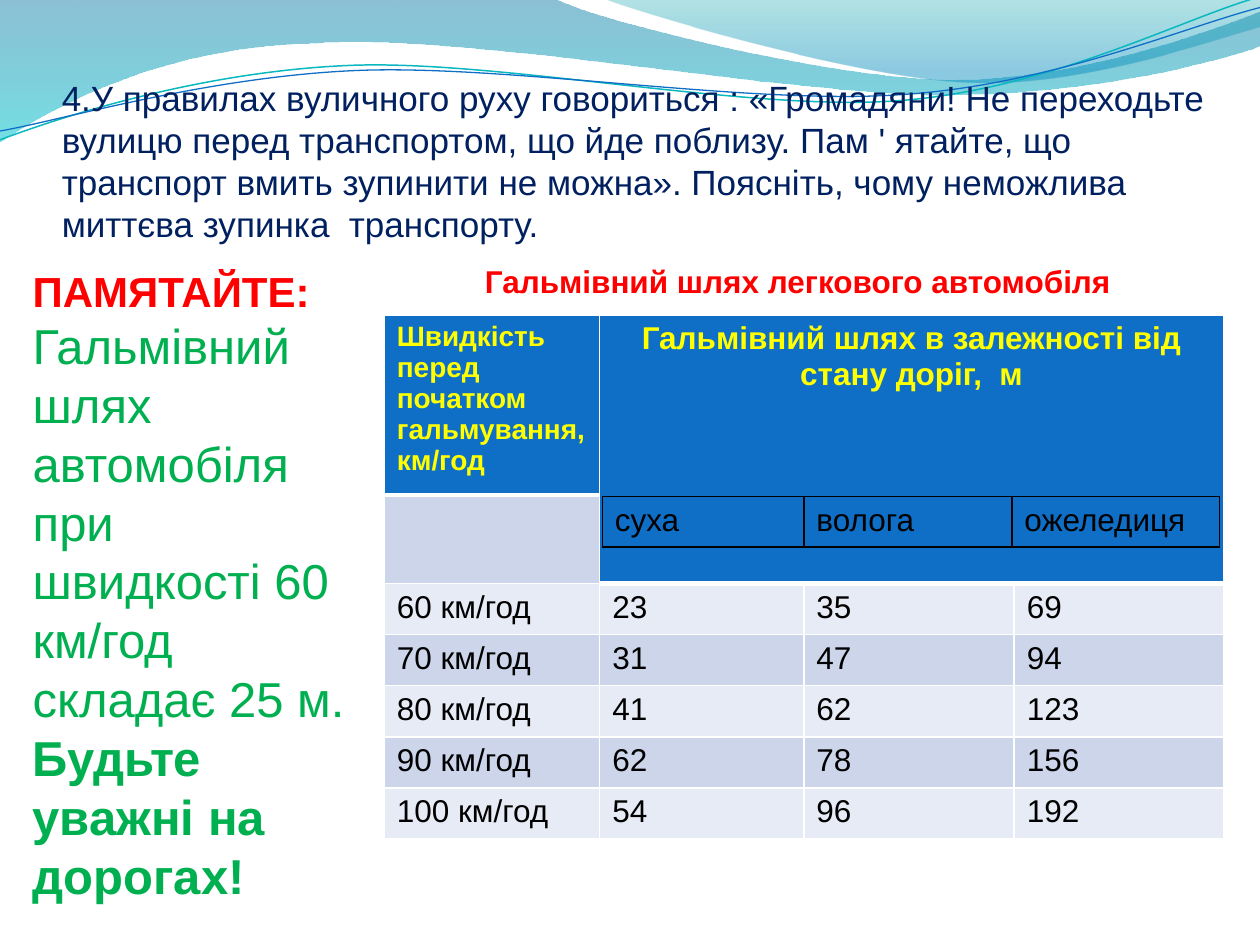
from lxml.etree import SubElement
from pptx import Presentation
from pptx.dml.color import RGBColor
from pptx.enum.text import MSO_ANCHOR, MSO_AUTO_SIZE, PP_ALIGN
from pptx.oxml.ns import qn
from pptx.util import Inches, Pt

W, H = 10, 7.5
FONT = "Arial"
COLORS = {
    "navy": "002060", "red": "FF0000", "green": "00B050", "yellow": "FFFF00",
    "black": "000000", "white": "FFFFFF", "blue": "0F6FC6",
    "light": "E7EBF5", "mid": "CCD5EA", "teal": "0AB8BF",
    "sea": "0074A1", "aqua": "00C6CF", "lagoon": "00A1A9", "sky": "008BBF",
}

# Waves: a start point, then lines (2 numbers) or Bezier curves (6 numbers)
BROAD_WAVE = [
    (0, 0), (4.4, -0.01), (4.76, 0.17, 6.64, 0.63, 7.58, 0.63),
    (8.53, 0.63, 9.58, 0.26, 10, 0.09), (10.01, 0.36),
    (9.83, 0.44, 8.7, 0.76, 7.46, 0.75), (6.22, 0.75, 3.82, 0.28, 2.57, 0.34),
    (1.29, 0.36, 0.46, 0.83, -0.01, 1.13)]
RIGHT_WAVE = [
    (4.79, -0.01), (5.09, 0.11, 6.82, 0.62, 7.69, 0.65),
    (8.56, 0.69, 9.61, 0.32, 10, 0.21), (10, 0)]
TEAL_CURVE = [
    (0, 1.11), (0.48, 0.93, 1.58, 0.57, 2.77, 0.52),
    (3.95, 0.47, 5.93, 0.89, 7.13, 0.8), (8.33, 0.71, 9.38, 0.15, 9.98, -0.02)]
BLUE_CURVE = [
    (0, 1.04), (0.47, 0.96, 1.64, 0.61, 2.83, 0.56),
    (4.03, 0.51, 5.97, 0.84, 7.17, 0.75), (8.36, 0.67, 9.41, 0.21, 10, 0.06)]

SPEED_ROWS = [
    ("60 км/год", 23, 35, 69), ("70 км/год", 31, 47, 94),
    ("80 км/год", 41, 62, 123), ("90 км/год", 62, 78, 156),
    ("100 км/год", 54, 96, 192)]


def rgb(name):
    return RGBColor.from_string(COLORS[name])


def add_outline(s, steps, close):
    """Build a freeform, joining the points of each curve into a Bezier."""
    pts = [(Inches(step[i]), Inches(step[i + 1]))
           for step in steps for i in range(0, len(step), 2)]
    fb = s.shapes.build_freeform(*pts[0])
    fb.add_line_segments(pts[1:], close=close)
    sp = fb.convert_to_shape()
    sp.shadow.inherit = False
    segments = iter(sp._element.findall(".//" + qn("a:lnTo")))
    for step in steps[1:]:
        first = next(segments)
        if len(step) == 6:
            first.tag = qn("a:cubicBezTo")
            for _ in range(2):
                extra = next(segments)
                first.append(extra[0])
                extra.getparent().remove(extra)
    return sp


def add_wave(s, steps, stops):
    """Add a filled wave; stops hold (position, colour, opacity %)."""
    sp = add_outline(s, steps, True)
    sp.line.fill.background()
    sp.fill.gradient()
    sp.fill.gradient_angle = 270
    for stop, (pos, color, opacity) in zip(sp.fill.gradient_stops, stops):
        stop.position = pos
        stop.color.rgb = rgb(color)
        clr = sp._element.findall(".//" + qn("a:srgbClr"))[-1 if pos else 0]
        SubElement(clr, qn("a:alpha"), val=str(opacity * 1000))


def add_curve(s, steps, color, width):
    sp = add_outline(s, steps, False)
    sp.fill.background()
    sp.line.color.rgb = rgb(color)
    sp.line.width = Pt(width)


def write(tf, paragraphs, align=PP_ALIGN.LEFT):
    """Write paragraphs, each a list of (text, size, colour, bold) runs."""
    tf.word_wrap = True
    for i, runs in enumerate(paragraphs):
        p = tf.add_paragraph() if i else tf.paragraphs[0]
        formats = {"alignment": align, "line_spacing": 1.0,
                   "space_before": Pt(0), "space_after": Pt(0)}
        for key, value in formats.items():
            setattr(p, key, value)
        for text, size, color, bold in runs:
            r = p.add_run()
            r.text = text
            for key, value in {"name": FONT, "size": Pt(size), "bold": bold}.items():
                setattr(r.font, key, value)
            r.font.color.rgb = rgb(color)


def place_text(s, sp, box, paragraphs):
    """Move a text shape to the front, set its box and fill in its text."""
    s.shapes._spTree.append(sp._element)
    for key, value in zip(("left", "top", "width", "height"), box):
        setattr(sp, key, Inches(value))
    tf = sp.text_frame
    tf.auto_size = MSO_AUTO_SIZE.NONE
    tf.vertical_anchor = MSO_ANCHOR.MIDDLE
    write(tf, paragraphs)
    for p in tf.paragraphs:
        pPr = p._p.get_or_add_pPr()
        pPr.set("marL", "0")
        pPr.set("indent", "0")
        SubElement(pPr, qn("a:buNone"))


def set_cell(cell, runs=(), fill=None, border="white", bottom=1):
    write(cell.text_frame, [runs])
    tcPr = cell._tc.get_or_add_tcPr()
    for side, width in (("L", 1), ("R", 1), ("T", 1), ("B", bottom)):
        ln = SubElement(tcPr, qn("a:ln" + side), w=str(Pt(width)))
        solid = SubElement(ln, qn("a:solidFill"))
        SubElement(solid, qn("a:srgbClr"), val=COLORS[border])
    if fill:
        cell.fill.solid()
        cell.fill.fore_color.rgb = rgb(fill)
    else:
        cell.fill.background()


def add_grid(s, left, top, cols, rows):
    box = [Inches(v) for v in (left, top, sum(cols), sum(rows))]
    table = s.shapes.add_table(len(rows), len(cols), *box).table
    table.first_row = table.horz_banding = False
    for col, width in zip(table.columns, cols):
        col.width = Inches(width)
    for row, height in zip(table.rows, rows):
        row.height = Inches(height)
    return table


def add_braking_table(s):
    table = add_grid(s, 3.05, 2.5, [1.71, 1.62, 1.67, 1.66], [1.43, 0.7] + [2.03 / 5] * 5)
    # Header, with the right part spanning two rows and three columns
    table.cell(0, 1).merge(table.cell(1, 3))
    for r in (0, 1):
        for c in (1, 2, 3):
            set_cell(table.cell(r, c), fill="blue", bottom=3)
    set_cell(table.cell(0, 0), [("Швидкість перед початком гальмування, км/год",
                                 16, "yellow", True)], "blue", bottom=3)
    write(table.cell(0, 1).text_frame,
          [[("Гальмівний шлях в залежності від стану доріг,  м", 18, "yellow", True)]],
          PP_ALIGN.CENTER)
    set_cell(table.cell(1, 0), fill="mid")
    # Speeds and braking distances
    for r, values in enumerate(SPEED_ROWS, 2):
        for c, value in enumerate(values):
            set_cell(table.cell(r, c), [(str(value), 18, "black", False)],
                     "mid" if r % 2 else "light")


def add_road_table(s):
    table = add_grid(s, 4.78, 3.94, [1.6, 1.65, 1.65], [0.4])
    for c, state in enumerate(("суха", "волога", "ожеледиця")):
        set_cell(table.cell(0, c), [(state, 18, "black", False)], border="black")


def main():
    prs = Presentation()
    prs.slide_width, prs.slide_height = Inches(W), Inches(H)
    s = prs.slides.add_slide(prs.slide_layouts[1])

    # Waves along the top
    add_wave(s, BROAD_WAVE, [(0, "sea", 45), (1, "aqua", 55)])
    add_wave(s, RIGHT_WAVE, [(0, "lagoon", 30), (0.8, "sky", 45)])
    add_curve(s, TEAL_CURVE, "teal", 0.85)
    add_curve(s, BLUE_CURVE, "blue", 0.75)

    # Question, reminder and table caption
    place_text(s, s.shapes.title, (0.39, 0.55, 9.3, 1.45), [[(
        "4.У правилах вуличного руху говориться : «Громадяни! Не переходьте вулицю "
        "перед транспортом, що йде поблизу. Пам ' ятайте, що транспорт вмить зупинити "
        "не можна». Поясніть, чому неможлива миттєва зупинка  транспорту.",
        20, "navy", False)]])
    place_text(s, s.placeholders[1], (0.16, 2.03, 2.73, 5.22), [
        [("ПАМЯТАЙТЕ: ", 24, "red", True),
         ("Гальмівний шлях автомобіля при швидкості 60 км/год складає 25 м.",
          28, "green", False)],
        [("Будьте уважні на дорогах!", 28, "green", True)]])
    place_text(s, s.shapes.add_textbox(0, 0, 0, 0), (3.75, 2.03, 5.7, 0.4),
               [[("Гальмівний шлях легкового автомобіля", 18, "red", True)]])

    # Tables
    add_braking_table(s)
    add_road_table(s)
    prs.save("out.pptx")


if __name__ == "__main__":
    main()
